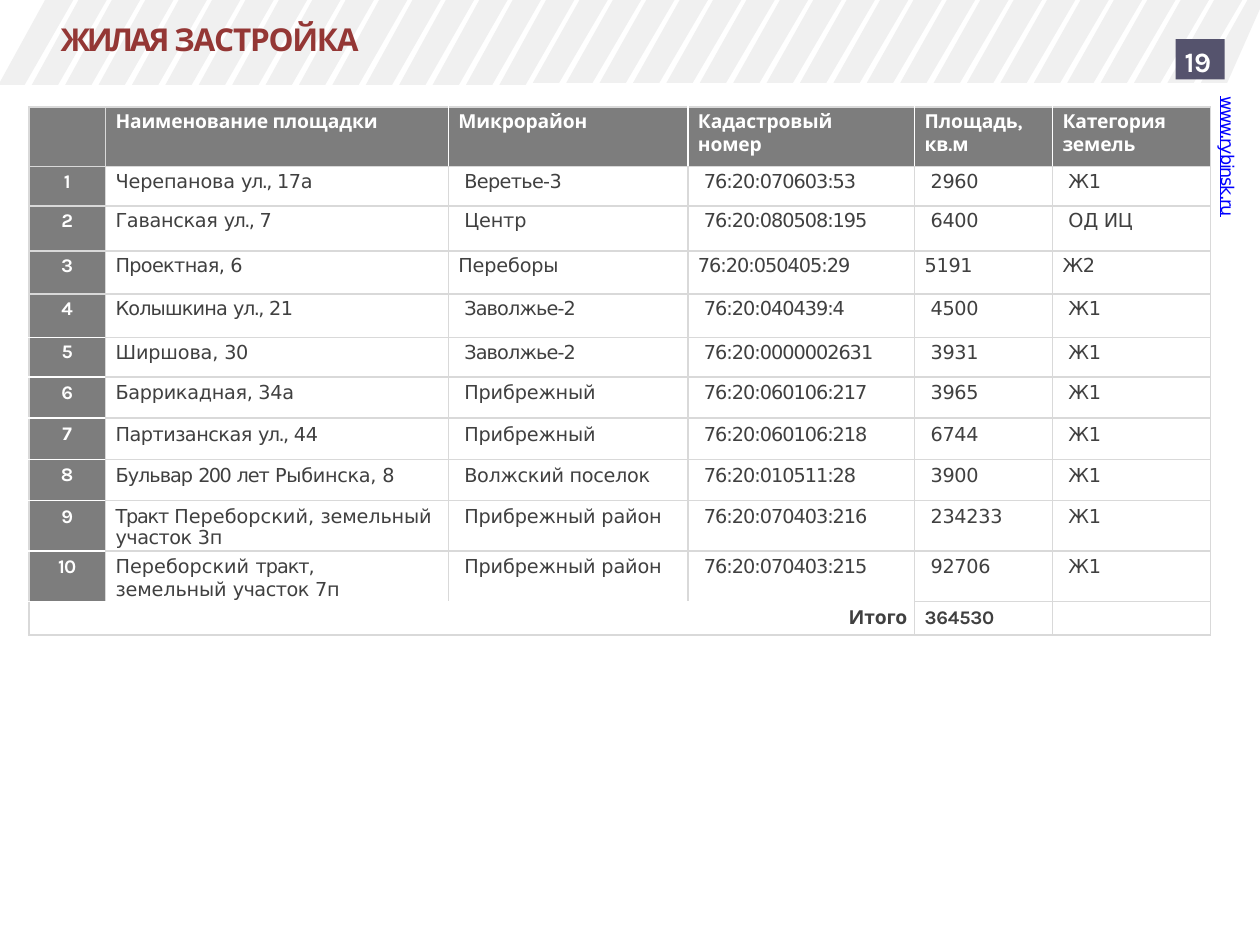
from lxml import etree
from pptx import Presentation
from pptx.dml.color import RGBColor
from pptx.enum import shapes, text
from pptx.oxml import ns
from pptx.util import Cm, Pt

COLORS = {"stripe": "F0F0F0", "title": "943735", "link": "0000FF", "badge": "55536D",
          "head": "7D7D7D", "white": "FFFFFF", "body": "404040", "grid": "D9D9D9"}
HEAD_FONT, BODY_FONT = "Karla", "DejaVu Sans"

# Content: runs are (text, letter spacing in points)
TITLE = [("ЖИЛАЯ ", -1.8), ("ЗАСТРОЙКА", -0.7)]
SITE = [("www.rybinsk.ru", -0.6)]
PAGE = [("19", -0.2)]
HEADERS = ["", "Наименование площадки", "Микрорайон", "Кадастровый номер",
           "Площадь, кв.м", "Категория земель"]
STREET = ("ул., ", -0.9)
# Address lines, district, district spacing, cadastral number, area, land category
PLOTS = [
    ([[("Черепанова ", -0.1), STREET, ("17а", -0.2)]],
     "Веретье-3", -0.4, "76:20:070603:53", "2960", "Ж1"),
    ([[("Гаванская ", -0.2), STREET, ("7", -0.5)]],
     "Центр", -0.1, "76:20:080508:195", "6400", "ОД ИЦ"),
    ([[("Проектная, ", -0.4), ("6", -0.5)]],
     "Переборы", -0.1, "76:20:050405:29", "5191", "Ж2"),
    ([[("Колышкина ", -0.5), STREET, ("21", -0.2)]],
     "Заволжье-2", -0.5, "76:20:040439:4", "4500", "Ж1"),
    ([[("Ширшова, ", -0.1), ("30", -0.3)]],
     "Заволжье-2", -0.5, "76:20:0000002631", "3931", "Ж1"),
    ([[("Баррикадная, 34а", -0.2)]],
     "Прибрежный", -0.1, "76:20:060106:217", "3965", "Ж1"),
    ([[("Партизанская ", -0.3), STREET, ("44", -0.2)]],
     "Прибрежный", -0.1, "76:20:060106:218", "6744", "Ж1"),
    ([[("Бульвар ", -0.6), ("200 ", -0.9), ("лет ", -0.6), ("Рыбинска, ", -0.2), ("8", -0.5)]],
     "Волжский поселок", -0.2, "76:20:010511:28", "3900", "Ж1"),
    ([[("Тракт ", -0.7), ("Переборский, ", 0), ("земельный", -0.1)],
      [("участок ", -0.3), ("3п", -0.2)]],
     "Прибрежный район", -0.1, "76:20:070403:216", "234233", "Ж1"),
    ([[("Переборский ", 0), ("тракт, ", -0.6), ("земельный ", -0.1),
       ("участок ", -0.3), ("7п", -0.2)]],
     "Прибрежный район", -0.1, "76:20:070403:215", "92706", "Ж1"),
]
TOTAL_LABEL, TOTAL_AREA = "Итого", "364530"

# Layout in centimetres
SLIDE_W, SLIDE_H = 25.4, 19.05
COLS = [1.55, 6.91, 4.83, 4.57, 2.78, 3.18]
ROWS = [1.2, 0.79, 0.91, 0.87, 0.87, 0.8, 0.83, 0.83, 0.83, 1.02, 1.02, 0.67]
TABLE_LEFT, TABLE_TOP = 0.58, 2.16
STRIPES, STRIPE_FIRST, STRIPE_LAST = 37, 0.91, 25.15
STRIPE_W, STRIPE_SLANT, STRIPE_FOOT = 0.57, 0.94, 0.53
SHORT_INDENT, LONG_INDENT = 0.2, 0.32
UNINDENTED_PLOT = 3


def rgb(name):
    return RGBColor.from_string(COLORS[name])


def write(frame, lines, font=BODY_FONT, size=11, color="body", bold=False,
          underline=None, align=text.PP_ALIGN.LEFT, line_pt=None):
    """Fill a text frame; every line is a paragraph made of spaced runs."""
    for index, runs in enumerate(lines):
        line = frame.add_paragraph() if index else frame.paragraphs[0]
        line.alignment = align
        line.space_before = Pt(0)
        if index and line_pt:
            line.line_spacing = Pt(line_pt)
        for words, spacing in runs:
            run = line.add_run()
            run.text = words
            run.font.name, run.font.size = font, Pt(size)
            run.font.bold, run.font.underline = bold, underline
            run.font.color.rgb = rgb(color)
            run._r.get_or_add_rPr().set("spc", str(round(spacing * 100)))


def inset(box, left=0, top=0.03, right=0):
    box.margin_left, box.margin_top = Cm(left), Cm(top)
    box.margin_right, box.margin_bottom = Cm(right), 0


def place(shape, left, top, width, height):
    shape.left, shape.top = Cm(left), Cm(top)
    shape.width, shape.height = Cm(width), Cm(height)


def border(cell, **sides):
    for side in "LRTB":
        line = etree.SubElement(cell._tc.get_or_add_tcPr(), ns.qn(f"a:ln{side}"), w="12700")
        fill = etree.SubElement(line, ns.qn("a:solidFill"))
        etree.SubElement(fill, ns.qn("a:srgbClr"), val=COLORS[sides.get(side, "grid")])


def stripe_outline(index):
    x = STRIPE_FIRST + index * (STRIPE_LAST - STRIPE_FIRST) / (STRIPES - 1)
    foot = 1.71 if x < 11.5 else 1.67
    right = x + STRIPE_W
    outline = [(min(right, SLIDE_W), 0), (x, 0), (x - STRIPE_SLANT, foot),
               (x - STRIPE_SLANT + STRIPE_FOOT, foot)]
    if right > SLIDE_W:
        outline.append((SLIDE_W, 0.18))
    return [(Cm(px), Cm(py)) for px, py in outline]


def add_stripes(slide):
    outlines = [stripe_outline(index) for index in range(STRIPES)]
    builder = slide.shapes.build_freeform(*outlines[0][0], scale=1.0)
    for index, outline in enumerate(outlines):
        if index:
            builder.move_to(*outline[0])
        builder.add_line_segments(outline[1:], close=True)
    stripes = builder.convert_to_shape()
    stripes.shadow.inherit = False
    stripes.fill.solid()
    stripes.fill.fore_color.rgb = rgb("stripe")
    stripes.line.fill.background()
    slide.shapes._spTree.insert(2, stripes._element)  # behind the title


def table_rows():
    """Rows of cells, each cell a list of lines."""
    yield [[[(name, -0.1)]] if name else [] for name in HEADERS]
    for number, (address, district, spacing, cadastral, area, land) in enumerate(PLOTS, 1):
        yield [[[(str(number), -0.5)]], address, [[(district, spacing)]],
               [[(cadastral, -0.6)]], [[(area, -0.2)]], [[(land, -0.2)]]]
    yield [[[(TOTAL_LABEL, -0.1)]], [], [], [], [[(TOTAL_AREA, -0.1)]], []]


def add_plots_table(slide):
    table = slide.shapes.add_table(len(ROWS), len(COLS), Cm(TABLE_LEFT), Cm(TABLE_TOP),
                                   Cm(sum(COLS)), Cm(sum(ROWS))).table
    table.first_row = table.horz_banding = False
    for column, width in zip(table.columns, COLS):
        column.width = Cm(width)
    for row, height in zip(table.rows, ROWS):
        row.height = Cm(height)
    last_row, last_col = len(ROWS) - 1, len(COLS) - 1
    table.cell(last_row, 0).merge(table.cell(last_row, 3))

    for r, contents in enumerate(table_rows()):
        for c, lines in enumerate(contents):
            cell = table.cell(r, c)
            header, total, number = r == 0, r == last_row, c == 0
            dark = header or (number and not total)

            # Borders and fill
            sides = {}
            if header and c > 1:
                sides["L"] = "white"
            if header and 0 < c < last_col:
                sides["R"] = "white"
            if (number and r > 4) or (total and c < 4):
                sides["T"] = "white"
            if (number and 4 <= r < last_row) or (r == last_row - 1 and c < 4):
                sides["B"] = "white"
            border(cell, **sides)
            if dark:
                cell.fill.solid()
                cell.fill.fore_color.rgb = rgb("head")
            else:
                cell.fill.background()

            # Text
            short = header or total or c == 1 or r == UNINDENTED_PLOT
            left = 0 if number else SHORT_INDENT if short else LONG_INDENT
            right = 0.5 if header else 0.8 if (r, c) == (10, 1) else 0
            if number and total:
                right = 0.15
            inset(cell, left, 0.08 if r < 6 else 0.1, right)
            align = text.PP_ALIGN.LEFT
            if number:
                align = text.PP_ALIGN.RIGHT if total else text.PP_ALIGN.CENTER
            if lines:
                write(cell.text_frame, lines, font=HEAD_FONT if dark or total else BODY_FONT,
                      color="white" if dark else "body", bold=dark or total,
                      align=align, line_pt=12.3)
            else:
                end = cell.text_frame.paragraphs[0]._p.get_or_add_endParaRPr()
                end.set("sz", "1100")


def main():
    deck = Presentation()
    deck.slide_width, deck.slide_height = Cm(SLIDE_W), Cm(SLIDE_H)
    slide = deck.slides.add_slide(deck.slide_layouts[5])

    # Striped band and title
    add_stripes(slide)
    title = slide.shapes.title
    place(title, 0.99, 0.38, 21.08, 0.91)
    frame = title.text_frame
    inset(frame, left=0.23)
    frame.word_wrap, frame.auto_size = True, text.MSO_AUTO_SIZE.NONE
    frame.vertical_anchor = text.MSO_ANCHOR.TOP
    write(frame, [TITLE], font=HEAD_FONT, size=18, color="title", bold=True)

    # Site address, turned sideways
    site = slide.shapes.add_textbox(Cm(24.46), Cm(1.91), Cm(0.51), Cm(2.59)).text_frame
    inset(site)
    site.word_wrap = True
    site._txBody.bodyPr.set("vert", "vert")
    write(site, [SITE], size=10, color="link", underline=True)

    add_plots_table(slide)

    # Page number badge
    badge = slide.shapes.add_shape(shapes.MSO_SHAPE.RECTANGLE,
                                   Cm(23.7), Cm(0.79), Cm(0.99), Cm(0.81))
    badge.shadow.inherit = False
    badge.fill.solid()
    badge.fill.fore_color.rgb = rgb("badge")
    badge.line.fill.background()
    inset(badge.text_frame, left=0.18, top=0.1)
    badge.text_frame.vertical_anchor = text.MSO_ANCHOR.TOP
    write(badge.text_frame, [PAGE], font=HEAD_FONT, size=16, color="white", bold=True)

    deck.save("out.pptx")


if __name__ == "__main__":
    main()
